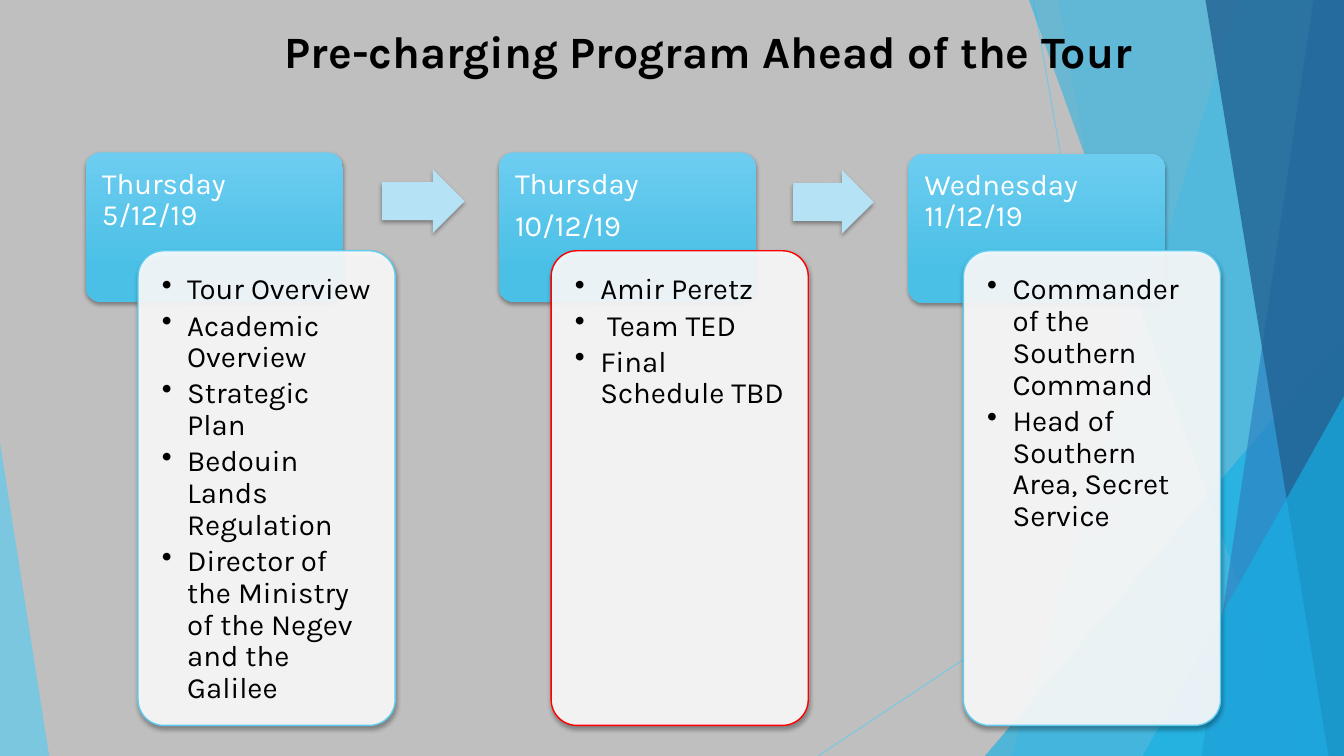
from typing import NamedTuple
from lxml import etree
from pptx import Presentation, util as u
from pptx.dml.color import RGBColor
from pptx.enum import shapes as s, text as t
from pptx.oxml.ns import qn

HUES = {
    "back": "BFBFBF", "sky": "5FCBEF", "cyan": "17B0E4", "blue": "2E83C3",
    "navy": "226292", "top": "6CCDF0", "low": "4BC0E6", "pale": "B6E2F6",
    "white": "FFFFFF", "black": "000000", "red": "FF0000",
}
WIDE, HIGH = 33.87, 19.05
FACE = "Karla"


class Ray(NamedTuple):
    start: tuple[float, float]
    end: tuple[float, float]


class Band(NamedTuple):
    """Strip from a slanted left edge to the right side of the slide."""
    top: float
    foot: float
    hue: str
    alpha: int


class Wedge(NamedTuple):
    left: float
    top: float
    width: float
    peak: float
    hue: str
    alpha: int


class Stage(NamedTuple):
    left: float
    top: float
    inner: float
    edge: str
    date: list[str]
    items: list[str]


class Arrow(NamedTuple):
    left: float
    top: float
    width: float
    turn: float


RAYS = [Ray((26.04, 0), (29.41, HIGH)), Ray((WIDE, 10.24), (20.62, HIGH))]
DECOR = [
    Band(31.19, 25.5, "sky", 36),
    Band(26.67, 30.05, "sky", 20),
    Wedge(24.82, 8.46, 9.05, 1, "cyan", 66),
    Band(25.93, 32.79, "cyan", 50),
    Band(33.1, 30.28, "blue", 70),
    Band(30.38, 33.48, "navy", 80),
    Wedge(28.8, 9.98, 5.07, 1, "cyan", 66),
    Wedge(0, 11.15, 1.24, 0, "sky", 70),
]
STAGES = [
    Stage(2.16, 3.84, 3.48, "sky", ["Thursday 5/12/19"],
          ["Tour Overview", "Academic Overview", "Strategic Plan",
           "Bedouin Lands Regulation",
           "Director of the Ministry of the Negev and the Galilee"]),
    Stage(12.57, 3.84, 13.89, "red", ["Thursday", "10/12/19"],
          ["Amir Peretz", " Team TED", "Final Schedule TBD"]),
    Stage(22.89, 3.87, 24.28, "sky", ["Wednesday 11/12/19"],
          ["Commander of the Southern Command",
           "Head of Southern Area, Secret Service"]),
]
ARROWS = [Arrow(9.63, 4.27, 2.08, 0), Arrow(19.99, 4.29, 2.03, 0.2)]


def tint(name: str) -> RGBColor:
    return RGBColor.from_string(HUES[name])


def add(node, tag: str, **attrs):
    return etree.SubElement(node, qn(tag), attrs)


def fade(shape, alpha: int) -> None:
    """Set the opacity, in percent, of the shape's first colour."""
    hue = shape._element.spPr.find(".//" + qn("a:srgbClr"))
    add(hue, "a:alpha", val=str(alpha * 1000))


def paint(shape, hue: str, alpha: int = 100) -> None:
    shape.shadow.inherit = False
    shape.line.fill.background()
    shape.fill.solid()
    shape.fill.fore_color.rgb = tint(hue)
    if alpha < 100:
        fade(shape, alpha)


def shade(shape) -> None:
    """Give a soft shadow below the shape."""
    glow = add(shape._element.spPr.find(qn("a:effectLst")), "a:outerShdw",
               blurRad=str(u.Pt(3)), dist=str(u.Pt(2)), dir="5400000",
               algn="ctr", rotWithShape="0")
    hue = add(glow, "a:srgbClr", val=HUES["black"])
    add(hue, "a:alpha", val="35000")


def form(slide, kind, left: float, top: float, width: float, height: float,
         *adjust: float):
    shape = slide.shapes.add_shape(
        kind, u.Cm(left), u.Cm(top), u.Cm(width), u.Cm(height))
    for i, value in enumerate(adjust):
        shape.adjustments[i] = value
    return shape


def write(shape, lines: list[str], *, size: float = 21, hue: str = "black",
          bold: bool = False, align=t.PP_ALIGN.LEFT, anchor=t.MSO_ANCHOR.TOP,
          pads: tuple[float, ...] = (0.25, 0.13, 0.25, 0.13),
          gap: float = 0, bullet: bool = False, wrap: bool = True) -> None:
    """Fill a shape with paragraphs; gap is a share of the text size."""
    frame = shape.text_frame
    frame.word_wrap, frame.vertical_anchor = wrap, anchor
    (frame.margin_left, frame.margin_top,
     frame.margin_right, frame.margin_bottom) = map(u.Cm, pads)
    for i, line in enumerate(lines):
        para = frame.add_paragraph() if i else frame.paragraphs[0]
        if bullet:
            props = para._p.get_or_add_pPr()
            props.set("marL", str(u.Cm(0.64)))
            props.set("indent", str(-u.Cm(0.64)))
            add(props, "a:buChar", char="•")
        para.alignment, para.line_spacing = align, 0.9
        para.space_after = u.Pt(gap * size)
        run = para.add_run()
        run.text = line
        run.font.name, run.font.size, run.font.bold = FACE, u.Pt(size), bold
        run.font.color.rgb = tint(hue)


def draw_ray(slide, ray: Ray) -> None:
    line = slide.shapes.add_connector(
        s.MSO_CONNECTOR.STRAIGHT, *map(u.Cm, ray.start + ray.end))
    line.line.color.rgb = tint("sky")
    line.line.width = u.Pt(0.75)
    fade(line, 70)
    add(line._element.spPr, "a:effectLst")


def draw_decor(slide, part: Band | Wedge) -> None:
    if isinstance(part, Band):
        pen = slide.shapes.build_freeform(u.Cm(part.top), 0)
        spots = [(WIDE, 0), (WIDE, HIGH), (part.foot, HIGH)]
        pen.add_line_segments([(u.Cm(x), u.Cm(y)) for x, y in spots])
        shape = pen.convert_to_shape()
    else:
        shape = form(slide, s.MSO_SHAPE.ISOSCELES_TRIANGLE, part.left,
                     part.top, part.width, HIGH - part.top, part.peak)
    paint(shape, part.hue, part.alpha)


def draw_stage(slide, stage: Stage) -> None:
    kind = s.MSO_SHAPE.ROUNDED_RECTANGLE
    head = form(slide, kind, stage.left, stage.top, 6.48, 3.76, 0.1)
    paint(head, "top")
    head.fill.gradient()
    head.fill.gradient_angle = 270
    for stop, hue, place in zip(head.fill.gradient_stops,
                                ("top", "low"), (0, 0.78)):
        stop.color.rgb, stop.position = tint(hue), place
    shade(head)
    write(head, stage.date, hue="white", gap=0.35, pads=(0.3, 0.3, 0.3, 1.3))

    body = form(slide, kind, stage.inner, 6.32, 6.48, 11.96, 0.1)
    paint(body, "white", 90)
    body.line.color.rgb = tint(stage.edge)
    body.line.width = u.Pt(1)
    shade(body)
    write(body, stage.items, gap=0.15, bullet=True, pads=(0.41,) * 4)


def draw_arrow(slide, arrow: Arrow) -> None:
    shape = form(slide, s.MSO_SHAPE.RIGHT_ARROW, arrow.left, arrow.top,
                 arrow.width, 1.6, 0.6, 0.5)
    shape.rotation = arrow.turn
    paint(shape, "pale")
    shade(shape)


def draw_title(slide) -> None:
    title = slide.shapes.title
    title.left, title.top = u.Cm(5.05), u.Cm(0.61)
    title.width, title.height = u.Cm(23.75), u.Cm(1.5)
    write(title, ["Pre-charging Program Ahead of the Tour"], size=32,
          bold=True, align=t.PP_ALIGN.RIGHT, anchor=t.MSO_ANCHOR.MIDDLE,
          wrap=False)
    title.text_frame.auto_size = t.MSO_AUTO_SIZE.SHAPE_TO_FIT_TEXT
    title._element.getparent().append(title._element)


def main() -> None:
    deck = Presentation()
    deck.slide_width, deck.slide_height = u.Cm(WIDE), u.Cm(HIGH)
    slide = deck.slides.add_slide(deck.slide_layouts[5])
    slide.background.fill.solid()
    slide.background.fill.fore_color.rgb = tint("back")
    for ray in RAYS:
        draw_ray(slide, ray)
    for part in DECOR:
        draw_decor(slide, part)
    for stage in STAGES:
        draw_stage(slide, stage)
    for arrow in ARROWS:
        draw_arrow(slide, arrow)
    draw_title(slide)
    deck.save("out.pptx")


if __name__ == "__main__":
    main()
